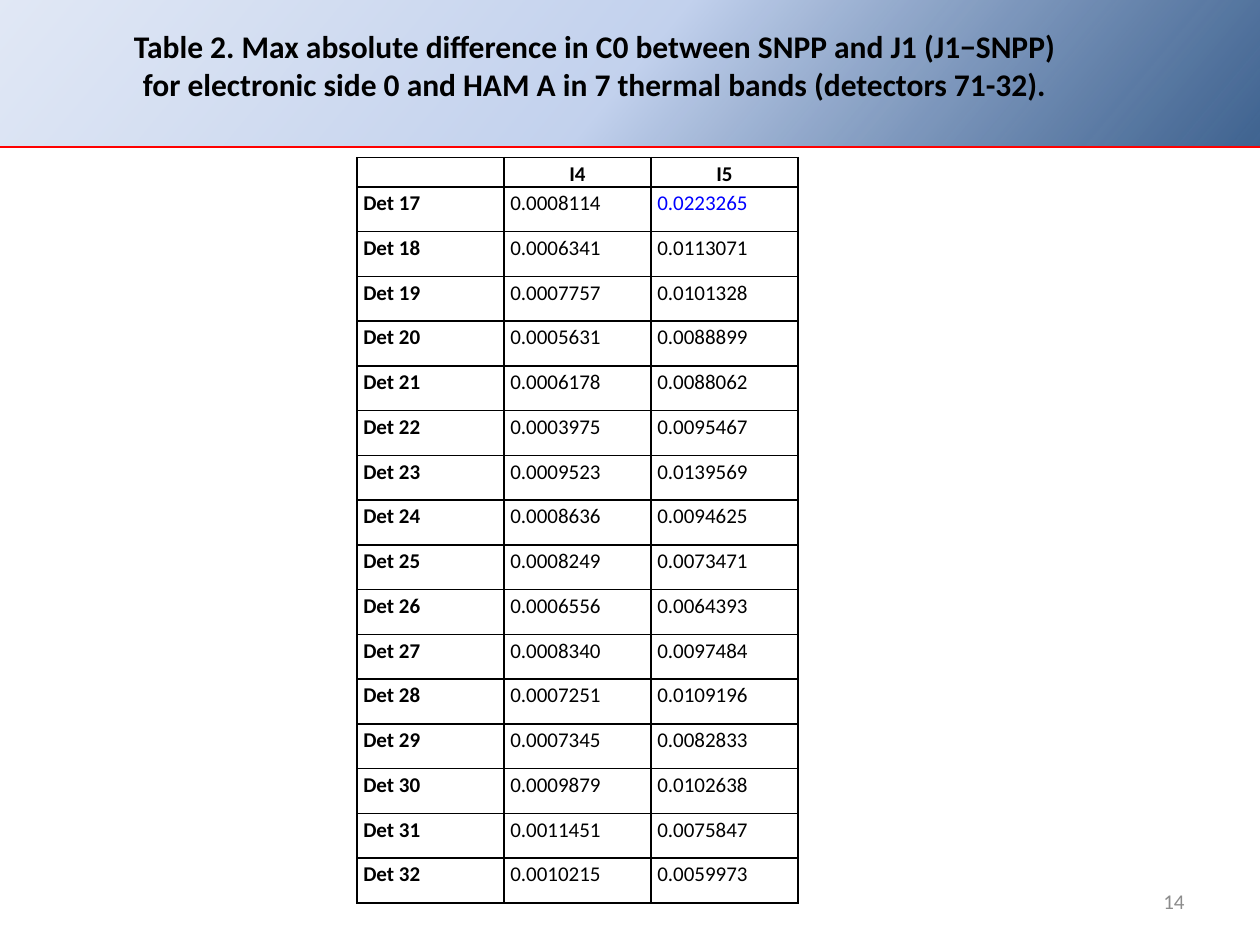
from dataclasses import dataclass

from lxml.etree import SubElement
from pptx import Presentation
from pptx.dml.color import RGBColor
from pptx.enum.shapes import MSO_CONNECTOR, MSO_SHAPE
from pptx.enum.text import MSO_ANCHOR, PP_ALIGN
from pptx.oxml.ns import qn
from pptx.util import Inches, Pt


@dataclass(frozen=True)
class Theme:
    font: str = "Calibri"
    ink: str = "000000"
    highlight: str = "0000FF"
    muted: str = "8C8C8C"
    rule: str = "FF0000"
    # position %, colour, opacity %
    banner: tuple = ((0, "1F497D", 85), (50, "C2D1ED", 100), (100, "E1E8F5", 100))
    banner_angle: int = 220
    title_size: int = 18
    body_size: int = 12
    rule_width: float = 1.5
    border_width: float = 1


THEME = Theme()
COLS, ROWS = 60, 45  # the slide grid: square units of 1/6 inch
UNIT = Inches(10) // COLS

TITLE = (
    "Table 2. Max absolute difference in C0 between SNPP and J1 (J1−SNPP) ",
    "for electronic side 0 and HAM A in 7 thermal bands (detectors 71-32). ",
)
BANDS = ("I4", "I5")
FIRST_DETECTOR = 17
C0_DIFFERENCES = (
    ("0.0008114", "0.0223265"),
    ("0.0006341", "0.0113071"),
    ("0.0007757", "0.0101328"),
    ("0.0005631", "0.0088899"),
    ("0.0006178", "0.0088062"),
    ("0.0003975", "0.0095467"),
    ("0.0009523", "0.0139569"),
    ("0.0008636", "0.0094625"),
    ("0.0008249", "0.0073471"),
    ("0.0006556", "0.0064393"),
    ("0.0008340", "0.0097484"),
    ("0.0007251", "0.0109196"),
    ("0.0007345", "0.0082833"),
    ("0.0009879", "0.0102638"),
    ("0.0011451", "0.0075847"),
    ("0.0010215", "0.0059973"),
)
LARGEST = max((v for row in C0_DIFFERENCES for v in row), key=float)


def grid(*units):
    """Turn grid units into slide lengths."""
    return [round(u * UNIT) for u in units]


def write(p, text, size=THEME.body_size, color=THEME.ink, bold=False,
          align=PP_ALIGN.LEFT, spacing=None):
    """Write one formatted run into a paragraph."""
    p.alignment = align
    if spacing:
        p.line_spacing = spacing
    if not text:  # an empty paragraph still needs its line height
        SubElement(p._p, qn("a:endParaRPr"), sz=str(size * 100))
        return
    r = p.add_run()
    r.text = text
    r.font.name, r.font.size, r.font.bold = THEME.font, Pt(size), bold
    r.font.color.rgb = RGBColor.from_string(color)


def fill_gradient(sp, stops, angle):
    """Fill a shape with a linear gradient of any number of stops."""
    sp.fill.gradient()
    grad = sp._element.spPr.find(qn("a:gradFill"))
    for child in list(grad):
        grad.remove(child)
    gs_list = SubElement(grad, qn("a:gsLst"))
    for pos, color, opacity in stops:
        gs = SubElement(gs_list, qn("a:gs"), pos=str(pos * 1000))
        clr = SubElement(gs, qn("a:srgbClr"), val=color)
        if opacity < 100:
            SubElement(clr, qn("a:alpha"), val=str(opacity * 1000))
    SubElement(grad, qn("a:lin"), ang=str(angle * 60000), scaled="0")


def set_borders(cell):
    """Draw all four sides of a cell, ahead of its fill element."""
    tc_pr = cell._tc.get_or_add_tcPr()
    for i, side in enumerate(("lnL", "lnR", "lnT", "lnB")):
        ln = SubElement(tc_pr, qn(f"a:{side}"), w=str(Pt(THEME.border_width)))
        fill = SubElement(ln, qn("a:solidFill"))
        SubElement(fill, qn("a:srgbClr"), val=THEME.ink)
        tc_pr.insert(i, ln)


def add_banner(slide, x, y, w, h):
    # Gradient band
    sp = slide.shapes.add_shape(MSO_SHAPE.RECTANGLE, *grid(x, y, w, h))
    sp.shadow.inherit = False
    sp.line.fill.background()
    fill_gradient(sp, THEME.banner, THEME.banner_angle)
    # Rule along its lower edge
    line = slide.shapes.add_connector(
        MSO_CONNECTOR.STRAIGHT, *grid(x, y + h, x + w, y + h))
    line.line.color.rgb = RGBColor.from_string(THEME.rule)
    line.line.width = Pt(THEME.rule_width)
    SubElement(line._element.spPr, qn("a:effectLst"))


def add_text(slide, x, y, w, h, lines, anchor=MSO_ANCHOR.TOP, **style):
    tf = slide.shapes.add_textbox(*grid(x, y, w, h)).text_frame
    tf.word_wrap = True
    tf.vertical_anchor = anchor
    for i, text in enumerate(lines):
        p = tf.add_paragraph() if i else tf.paragraphs[0]
        write(p, text, **style)


def add_difference_table(slide, x, y, w, h, header_h):
    rows = [("", *BANDS)]
    rows += [(f"Det {n}", *values)
             for n, values in enumerate(C0_DIFFERENCES, FIRST_DETECTOR)]
    n_cols = len(rows[0])
    table = slide.shapes.add_table(len(rows), n_cols, *grid(x, y, w, h)).table
    table.first_row = table.horz_banding = False

    # Equal columns, a low header and equal detector rows
    for col in table.columns:
        col.width = grid(w / n_cols)[0]
    row_h = (h - header_h) / len(C0_DIFFERENCES)
    for i, row in enumerate(table.rows):
        row.height = grid(row_h if i else header_h)[0]

    for i, row in enumerate(rows):
        for j, text in enumerate(row):
            cell = table.cell(i, j)
            cell.fill.background()
            cell.margin_left = cell.margin_right = Inches(0.05)
            cell.margin_top = cell.margin_bottom = 0
            set_borders(cell)
            write(cell.text_frame.paragraphs[0], text, spacing=1.15,
                  bold=i == 0 or j == 0,
                  color=THEME.highlight if text == LARGEST else THEME.ink,
                  align=PP_ALIGN.LEFT if i else PP_ALIGN.CENTER)


def main():
    prs = Presentation()
    prs.slide_width, prs.slide_height = grid(COLS, ROWS)
    slide = prs.slides.add_slide(prs.slide_layouts[6])

    add_banner(slide, 0, 0, COLS, 7)
    # Page number
    add_text(slide, 43, 41.7, 14, 2.4, ["14"], anchor=MSO_ANCHOR.MIDDLE,
             color=THEME.muted, align=PP_ALIGN.RIGHT)
    add_difference_table(slide, 17, 7.5, 21, 35.5, header_h=1.4)
    # Title
    add_text(slide, 4.5, 1, 48, 4.25, TITLE, size=THEME.title_size, bold=True,
             align=PP_ALIGN.CENTER)

    prs.save("out.pptx")


if __name__ == "__main__":
    main()
